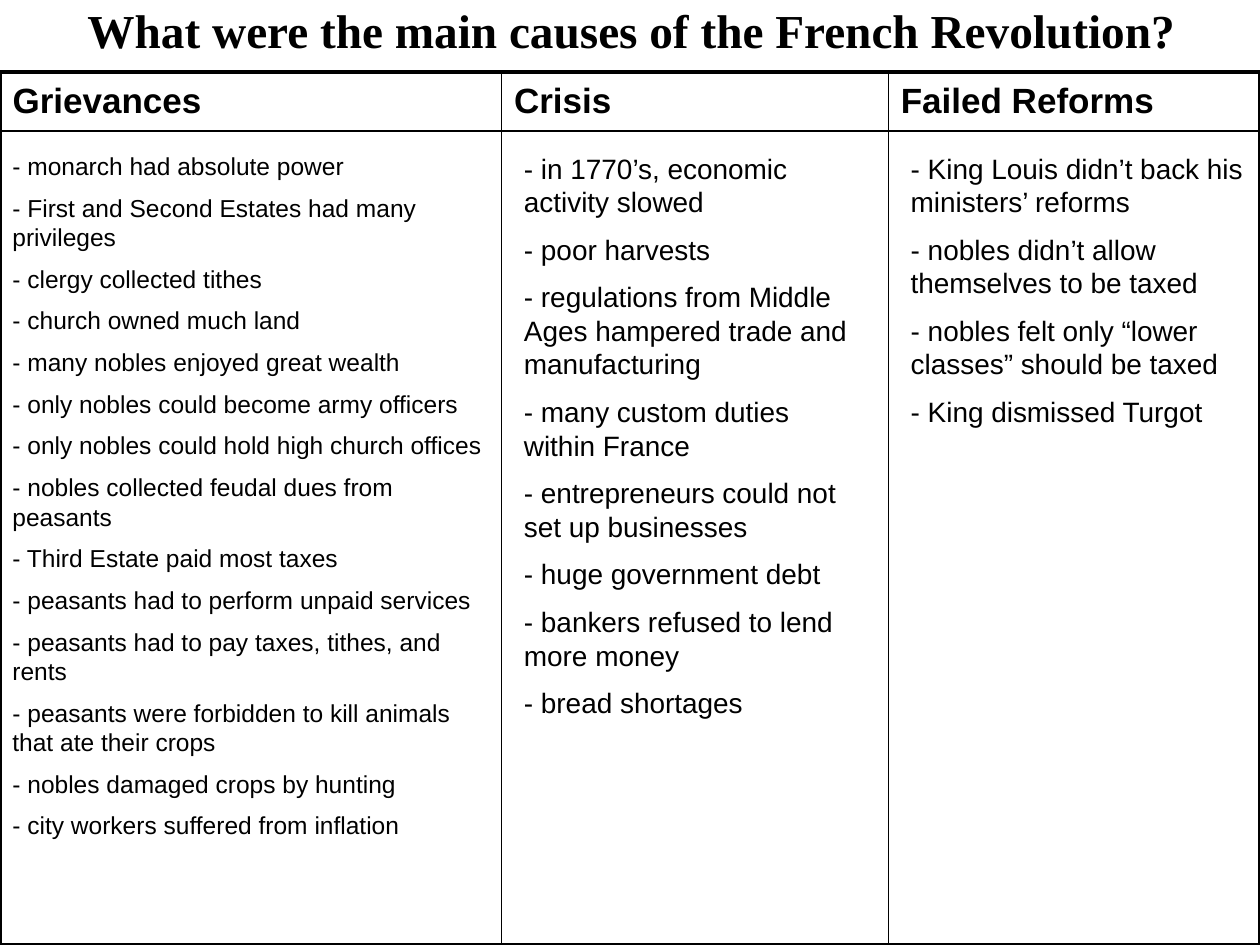
"""Build a three-column slide on the causes of the French Revolution."""
from lxml.etree import SubElement
from pptx import Presentation
from pptx.dml.color import RGBColor
from pptx.enum.text import MSO_ANCHOR as Anchor, PP_ALIGN as Align
from pptx.oxml.ns import qn
from pptx.util import Inches, Pt

BLACK = RGBColor(0, 0, 0)
WHITE = RGBColor(255, 255, 255)
THICK, THIN = Pt(2.25), Pt(1)


def add_text(para, text, size, font="Arial", bold=False):
    span = para.add_run()
    span.text = text
    span.font.name = font
    span.font.size = Pt(size)
    span.font.bold = bold
    span.font.color.rgb = BLACK


def add_borders(cell, widths):
    properties = cell._tc.get_or_add_tcPr()
    for index, (side, width) in enumerate(widths.items()):
        line = SubElement(properties, qn(f"a:ln{side}"), w=str(width))
        fill = SubElement(line, qn("a:solidFill"))
        SubElement(fill, qn("a:srgbClr"), val=str(BLACK))
        properties.insert(index, line)


columns = [
    ("Grievances", 3.98, 14, (0, 3.98, 5.8), [
        "- monarch had absolute power",
        "- First and Second Estates had many privileges",
        "- clergy collected tithes",
        "- church owned much land",
        "- many nobles enjoyed great wealth",
        "- only nobles could become army officers",
        "- only nobles could hold high church offices",
        "- nobles collected feudal dues from peasants",
        "- Third Estate paid most taxes",
        "- peasants had to perform unpaid services",
        "- peasants had to pay taxes, tithes, and rents",
        "- peasants were forbidden to kill animals that ate their crops",
        "- nobles damaged crops by hunting",
        "- city workers suffered from inflation",
    ]),
    ("Crisis", 3.07, 16, (4.06, 2.91, 4.78), [
        "- in 1770’s, economic activity slowed",
        "- poor harvests",
        "- regulations from Middle Ages hampered trade and manufacturing",
        "- many custom duties within France",
        "- entrepreneurs could not set up businesses",
        "- huge government debt",
        "- bankers refused to lend more money",
        "- bread shortages",
    ]),
    ("Failed Reforms", 2.95, 16, (7.13, 2.87, 2.37), [
        "- King Louis didn’t back his ministers’ reforms",
        "- nobles didn’t allow themselves to be taxed",
        "- nobles felt only “lower classes” should be taxed",
        "- King dismissed Turgot",
    ]),
]

deck = Presentation()
deck.slide_width, deck.slide_height = Inches(10), Inches(7.5)
page = deck.slides.add_slide(deck.slide_layouts[6])
page.background.fill.solid()
page.background.fill.fore_color.rgb = WHITE

title = page.shapes.add_textbox(Inches(0.51), Inches(0), Inches(9), Inches(0.47))
title.text_frame.word_wrap = True
title.text_frame.vertical_anchor = Anchor.MIDDLE
para = title.text_frame.paragraphs[0]
para.alignment = Align.CENTER
add_text(para, "What were the main causes of the French Revolution?", 27,
         "Times New Roman", True)

table = page.shapes.add_table(
    2, 3, Inches(0), Inches(0.57), Inches(10), Inches(6.93)).table
table.first_row = table.horz_banding = False
table.rows[0].height, table.rows[1].height = Inches(0.47), Inches(6.46)

for column, (heading, width, size, place, points) in enumerate(columns):
    table.columns[column].width = Inches(width)
    for row in range(2):
        cell = table.cell(row, column)
        cell.fill.background()
        cell.vertical_anchor = Anchor.MIDDLE
        add_borders(cell, {
            "L": THICK if column == 0 else THIN,
            "R": THICK if column == 2 else THIN,
            "T": THICK if row == 0 else THIN,
            "B": THICK if row == 1 else THIN,
        })
    add_text(table.cell(0, column).text_frame.paragraphs[0], heading, 20, bold=True)

    left, box_width, height = place
    box = page.shapes.add_textbox(
        Inches(left), Inches(1.15), Inches(box_width), Inches(height))
    frame = box.text_frame
    frame.word_wrap = True
    for number, point in enumerate(points):
        para = frame.add_paragraph() if number else frame.paragraphs[0]
        para.space_before = Pt(size / 2)
        para.line_spacing = Pt(size * 1.2)
        add_text(para, point, size)

deck.save("out.pptx")
